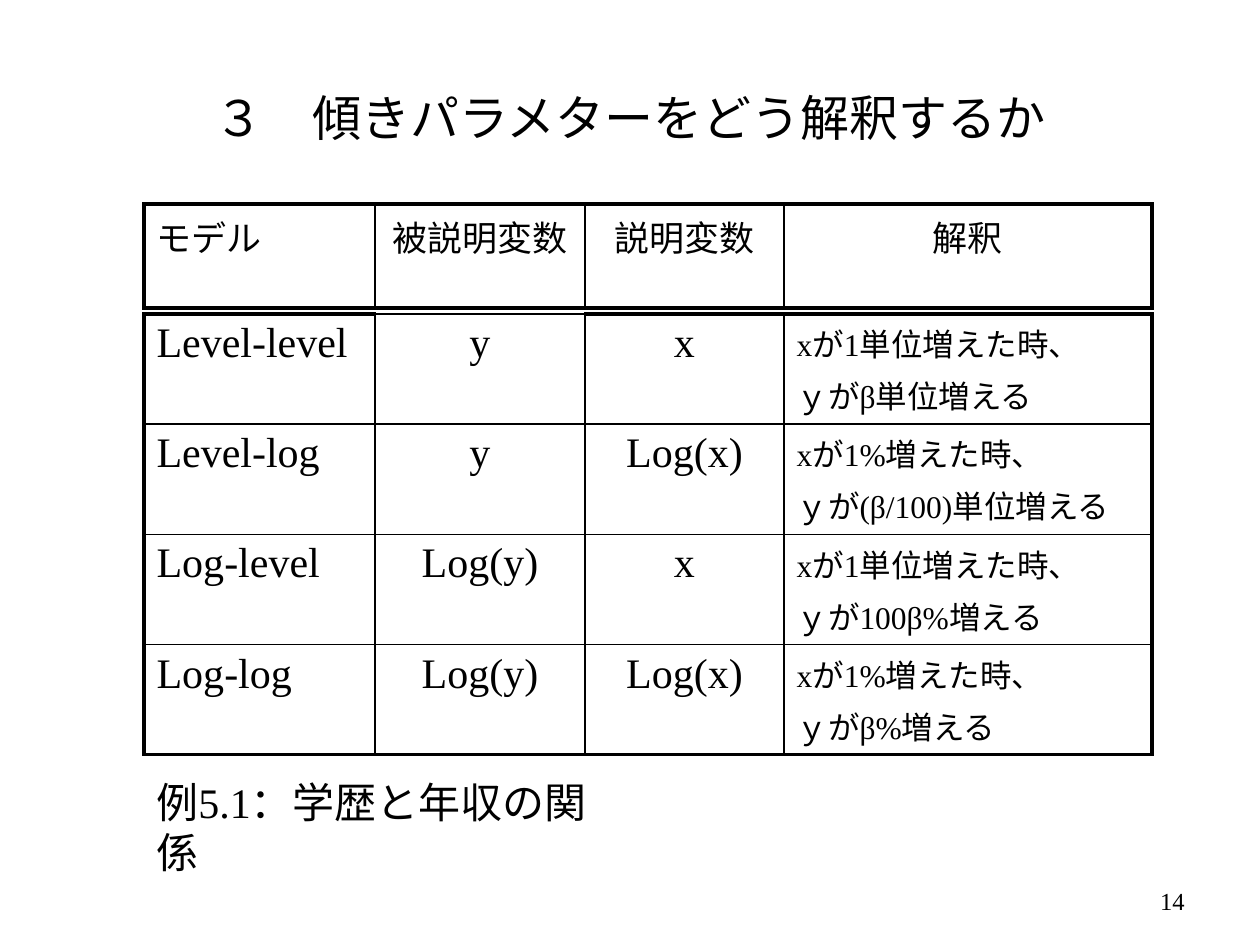
from dataclasses import dataclass
from lxml import etree
from pptx import Presentation
from pptx.dml.color import RGBColor
from pptx.enum.text import MSO_ANCHOR, PP_ALIGN
from pptx.oxml.ns import qn
from pptx.util import Emu, Pt

LEFT, MID, RIGHT = PP_ALIGN.LEFT, PP_ALIGN.CENTER, PP_ALIGN.RIGHT
CENTER = MSO_ANCHOR.MIDDLE
SCALE = 914400 / 126


@dataclass(frozen=True)
class Theme:
    ink: str = "000000"
    face: str = "Times New Roman"
    title: int = 28
    body: int = 24
    head: int = 20
    note: int = 18
    page: int = 14
    thin: float = 1
    thick: float = 2.25


theme = Theme()


def write(frame, text, size, align=LEFT, gap=0):
    frame.text = text
    for para in frame.paragraphs:
        para.alignment = align
        para.space_before = Pt(size * gap)
        para.font.size = Pt(size)
        para.font.name = theme.face
        para.font.color.rgb = RGBColor.from_string(theme.ink)


def grid(slide, box, rows, sizes, thin_tops):
    spot = [Emu(round(n * SCALE)) for n in box]
    table = slide.shapes.add_table(len(rows), len(WIDTHS), *spot).table
    table.first_row = table.horz_banding = False
    for col, width in zip(table.columns, WIDTHS):
        col.width = Emu(round(width * SCALE))
    for r, row in enumerate(rows):
        for c, text in enumerate(row):
            cell = table.cell(r, c)
            write(cell.text_frame, text, sizes[c], ALIGNS[c], 0.2)
            cell.fill.background()
            edges = {
                "L": c == 0,
                "R": c == len(row) - 1,
                "T": r == 0 and c not in thin_tops,
                "B": r == len(rows) - 1,
            }
            props = cell._tc.get_or_add_tcPr()
            for i, (side, outer) in enumerate(edges.items()):
                width = Pt(theme.thick if outer else theme.thin)
                line = etree.Element(qn(f"a:ln{side}"), w=str(width))
                fill = etree.SubElement(line, qn("a:solidFill"))
                etree.SubElement(fill, qn("a:srgbClr"), val=theme.ink)
                props.insert(i, line)


WIDTHS = [231, 210, 199, 368]
ALIGNS = [LEFT, MID, MID, LEFT]
HEADS = [["モデル", "被説明変数", "説明変数", "解釈"]]
MODELS = [
    ["Level-level", "y", "x", "xが1単位増えた時、\nｙがβ単位増える"],
    ["Level-log", "y", "Log(x)", "xが1%増えた時、\nｙが(β/100)単位増える"],
    ["Log-level", "Log(y)", "x", "xが1単位増えた時、\nｙが100β%増える"],
    ["Log-log", "Log(y)", "Log(x)", "xが1%増えた時、\nｙがβ%増える"],
]

deck = Presentation()
deck.slide_width = Emu(round(1260 * SCALE))
deck.slide_height = Emu(round(945 * SCALE))
slide = deck.slides.add_slide(deck.slide_layouts[5])

title = slide.shapes.title
title.left, title.top, title.width, title.height = [
    Emu(round(n * SCALE)) for n in (63, 38, 1134, 158)
]
write(title.text_frame, "３　傾きパラメターをどう解釈するか", theme.title, MID)
title.text_frame.vertical_anchor = CENTER

grid(slide, (144, 314, 1008, 384), MODELS, [theme.body] * 3 + [theme.note], [1])
ALIGNS[-1] = MID
grid(slide, (144, 204, 1008, 104), HEADS, [theme.head] * 4, [])

for box, text, size, align in (
    ((144, 770, 462, 63), "例5.1：学歴と年収の関係", theme.body, LEFT),
    ((903, 876, 294, 50), "14", theme.page, RIGHT),
):
    label = slide.shapes.add_textbox(*[Emu(round(n * SCALE)) for n in box])
    label.text_frame.word_wrap = True
    write(label.text_frame, text, size, align)
label.text_frame.vertical_anchor = CENTER

deck.save("out.pptx")
